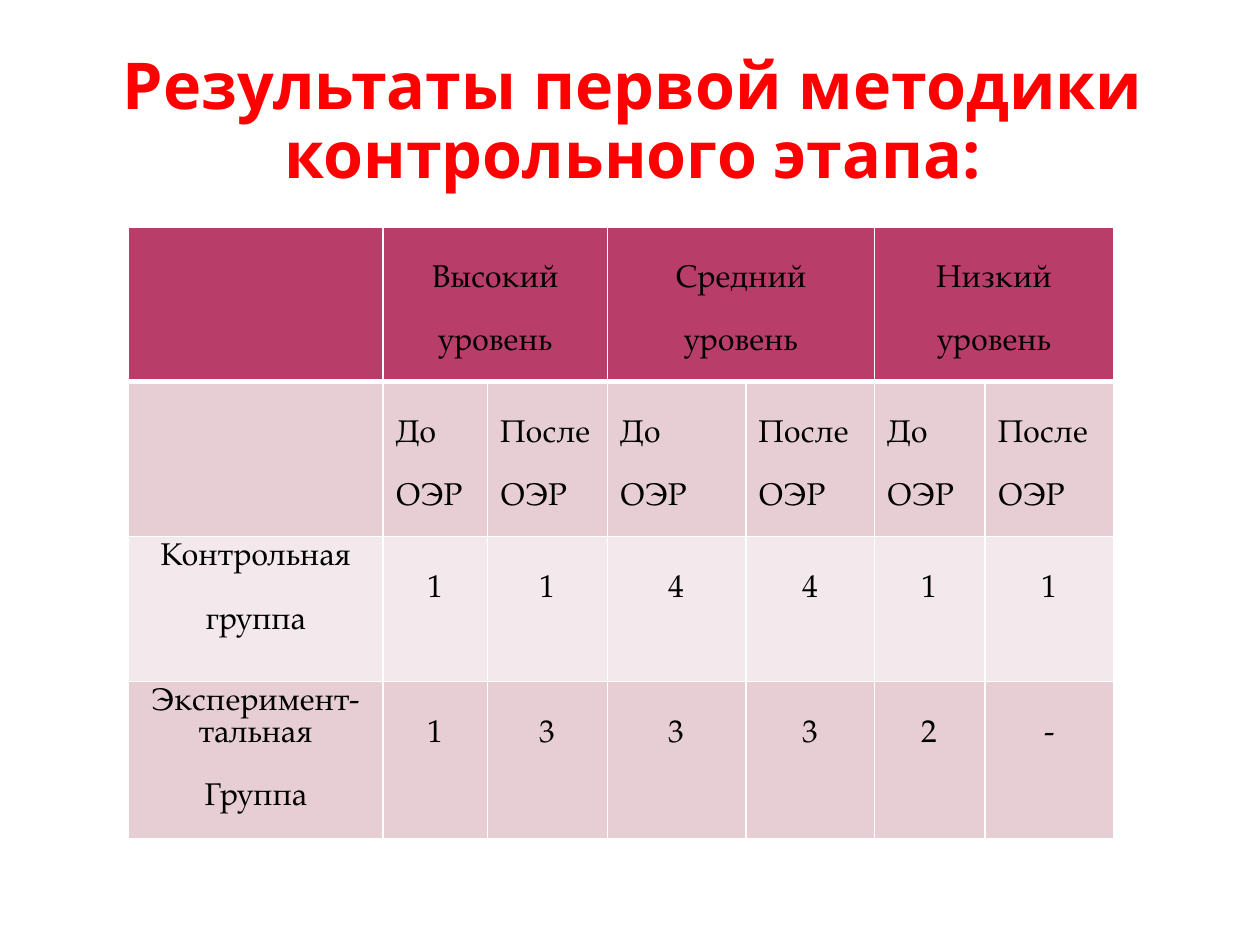
from dataclasses import dataclass

from lxml.etree import SubElement
from pptx import Presentation
from pptx.dml.color import RGBColor
from pptx.enum.text import MSO_ANCHOR, PP_ALIGN
from pptx.oxml.ns import qn
from pptx.util import Inches, Pt


@dataclass(frozen=True)
class Theme:
    """Hold the colours, fonts and type sizes."""
    red: str = "FF0000"
    black: str = "000000"
    white: str = "FFFFFF"
    head: str = "B83D68"
    dark: str = "E6CED4"
    light: str = "F3E8EB"
    sans: str = "Noto Sans"
    serif: str = "TeX Gyre Pagella"
    large: float = 36.9
    body: float = 18


THEME = Theme()
COLS = [2.02, 0.83, 0.95, 1.1, 1.02, 0.88, 1.02]
ROWS = [1.23, 1.23, 1.15, 1.23]
FILLS = [THEME.head, THEME.dark, THEME.light, THEME.dark]
LEVELS = ["Высокий", "Средний", "Низкий"]
GROUPS = [
    ["Контрольная\nгруппа", "1", "1", "4", "4", "1", "1"],
    ["Эксперимент-\nтальная\nГруппа", "1", "3", "3", "3", "2", "-"],
]


def write(frame, text, size=THEME.body, font=THEME.serif, color=THEME.black,
          bold=False, align=PP_ALIGN.CENTER, gap=THEME.body, lead=1.0):
    """Write one paragraph a line, with a gap above the last line."""
    frame.word_wrap = True
    lines = text.split("\n")
    for i, line in enumerate(lines):
        para = frame.add_paragraph() if i else frame.paragraphs[0]
        para.alignment = align
        para.line_spacing = lead
        para.space_before = Pt(gap if 0 < i == len(lines) - 1 else 0)
        run = para.add_run()
        run.text = line
        run.font.size = Pt(size)
        run.font.name = font
        run.font.bold = bold
        run.font.color.rgb = RGBColor.from_string(color)


def paint(cell, fill, top=1, base=1):
    """Give a cell white borders and a solid fill."""
    props = cell._tc.get_or_add_tcPr()
    for side, width in (("L", 1), ("R", 1), ("T", top), ("B", base)):
        line = SubElement(props, qn(f"a:ln{side}"), w=str(Pt(width)))
        solid = SubElement(line, qn("a:solidFill"))
        SubElement(solid, qn("a:srgbClr"), val=THEME.white)
    cell.fill.solid()
    cell.fill.fore_color.rgb = RGBColor.from_string(fill)


def put(cell, text, drop=True, **fmt):
    """Fill a cell with text, dropped by one line if asked."""
    cell.margin_top = Inches(0.3 if drop else 0.05)
    write(cell.text_frame, text, **fmt)


def add_title(slide):
    """Add the slide title."""
    box = slide.shapes.add_textbox(Inches(0.55), Inches(0.47), Inches(8.95), Inches(1.02))
    frame = box.text_frame
    frame.vertical_anchor = MSO_ANCHOR.MIDDLE
    write(frame, "Результаты первой методики контрольного этапа:", size=THEME.large,
          font=THEME.sans, color=THEME.red, bold=True, lead=0.88)


def add_grid(slide):
    """Add the table of results."""
    table = slide.shapes.add_table(
        len(ROWS), len(COLS), Inches(1.02), Inches(1.8),
        Inches(sum(COLS)), Inches(sum(ROWS))).table
    table.first_row = table.horz_banding = False
    for col, width in zip(table.columns, COLS):
        col.width = Inches(width)
    for r, (row, height) in enumerate(zip(table.rows, ROWS)):
        row.height = Inches(height)
        for cell in row.cells:
            paint(cell, FILLS[r], top=3 if r == 1 else 1, base=3 if r == 0 else 1)
    for i, level in enumerate(LEVELS):
        left = 1 + 2 * i
        table.cell(0, left).merge(table.cell(0, left + 1))
        put(table.cell(0, left), f"{level}\nуровень")
        for j, time in enumerate(["До", "После"]):
            put(table.cell(1, left + j), f"{time}\nОЭР", align=PP_ALIGN.LEFT)
    for r, group in enumerate(GROUPS, 2):
        for c, text in enumerate(group):
            put(table.cell(r, c), text, drop=c > 0)


def main():
    """Build and save the slide."""
    deck = Presentation()
    deck.slide_width, deck.slide_height = Inches(10), Inches(7.5)
    slide = deck.slides.add_slide(deck.slide_layouts[6])
    add_title(slide)
    add_grid(slide)
    deck.save("out.pptx")


if __name__ == "__main__":
    main()
